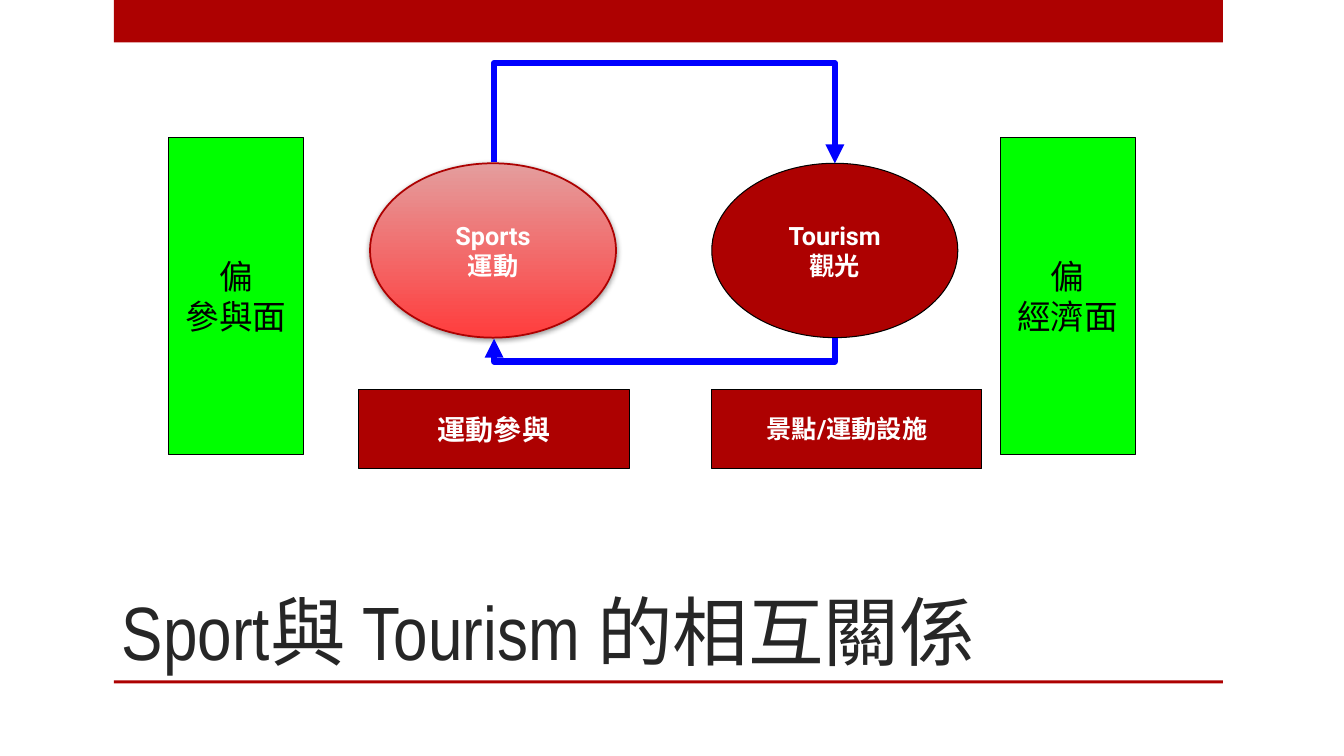
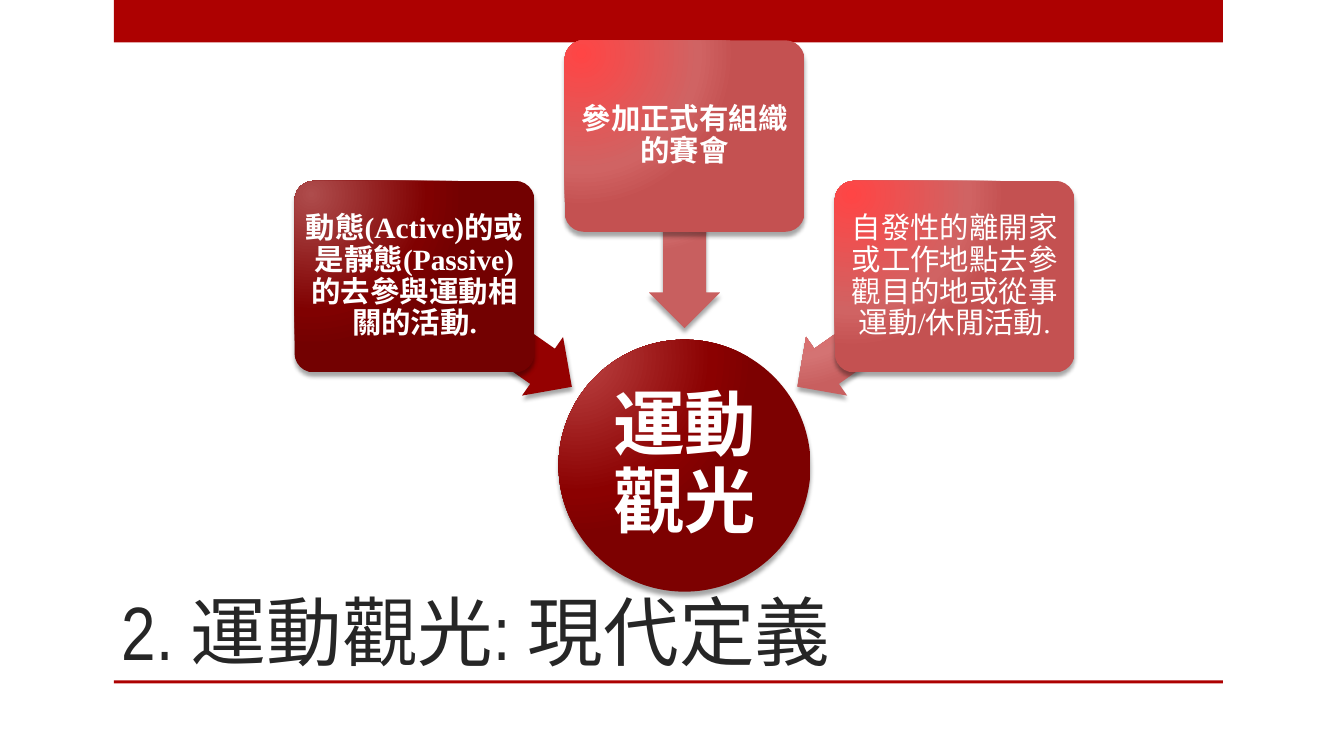
"""Two slides on sport and tourism, built with python-pptx."""
from math import cos, radians, sin

from lxml import etree
from pptx import Presentation
from pptx.dml.color import RGBColor
from pptx.enum import shapes, text
from pptx.oxml import ns
from pptx.util import Inches, Pt

RED, GREEN, BLUE = "AD0101", "00FF00", "0000FF"
BLACK, WHITE, TITLE_GREY = "000000", "FFFFFF", "262626"
TITLE_FONT, LABEL_FONT, CARD_FONT = "Arial Narrow", "Roboto", "Times New Roman"
TITLE_BOX = (1.11, 5, 9.89, 1.75)
BAND_BOX, RULE_BOX = (1.13, 0, 11, 0.42), (1.13, 6.75, 11, 0.03)
STOPS = (0, 76, 100)
PINK_CARD = ("FF4545", "D06363", "C45151")
PINK_ARROW = ("FF5050", "D47373", "C85F5F")
SHAPE = shapes.MSO_SHAPE


def rgb(value):
    """Return the colour for a hex string."""
    return RGBColor.from_string(value)


def child(parent, tag, **attributes):
    """Append a DrawingML element to parent and return it."""
    node = etree.SubElement(parent, ns.qn(f"a:{tag}"))
    for key, value in attributes.items():
        node.set(key, str(value))
    return node


def colour_node(parent, value):
    """Append a colour element to parent and return it."""
    return child(parent, "srgbClr", val=value)


def gradient(shape, colours):
    """Fill a shape with a linear (two colours) or circular (three) gradient."""
    shape.fill.background()
    properties = shape._element.spPr
    placeholder = properties.find(ns.qn("a:noFill"))
    fill = etree.Element(ns.qn("a:gradFill"), rotWithShape="1")
    stops = child(fill, "gsLst")
    circular = len(colours) == 3
    for position, value in zip(STOPS if circular else (0, 100), colours):
        colour_node(child(stops, "gs", pos=position * 1000), value)
    if circular:
        child(child(fill, "path", path="circle"), "fillToRect",
              l=15000, t=15000, r=100000, b=100000)
    else:
        child(fill, "lin", ang=90 * 60000, scaled=0)
    properties.replace(placeholder, fill)


def shade(shape, opacity, blur, distance, angle):
    """Give a shape an outer black shadow."""
    effects = shape._element.spPr.find(ns.qn("a:effectLst"))
    shadow = child(effects, "outerShdw", blurRad=Pt(blur), dist=Pt(distance),
                   dir=angle * 60000, rotWithShape=0)
    child(colour_node(shadow, BLACK), "alpha", val=opacity * 1000)


def block(slide, kind, box, fill, line=None, width=0.75, adjust=(), shadow=None):
    """Draw a preset shape with its fill, outline and shadow."""
    shape = slide.shapes.add_shape(kind, *map(Inches, box))
    shape.shadow.inherit = False
    for index, value in enumerate(adjust):
        shape.adjustments[index] = value
    if isinstance(fill, str):
        shape.fill.solid()
        shape.fill.fore_color.rgb = rgb(fill)
    else:
        gradient(shape, fill)
    if line:
        shape.line.color.rgb = rgb(line)
        shape.line.width = Pt(width)
    else:
        shape.line.fill.background()
    if shadow:
        shade(shape, *shadow)
    return shape


def write(shape, words, size, font, colour=WHITE, bold=False, wrap=True,
          align=text.PP_ALIGN.CENTER, anchor=text.MSO_ANCHOR.MIDDLE,
          spacing=None, margin=None):
    """Put formatted text into a shape, one paragraph a line."""
    frame = shape.text_frame
    frame.text = words
    frame.word_wrap = wrap
    frame.auto_size = text.MSO_AUTO_SIZE.NONE
    frame.vertical_anchor = anchor
    if margin is not None:
        frame.margin_left = frame.margin_right = Inches(margin)
        frame.margin_top = frame.margin_bottom = Inches(margin)
    for paragraph in frame.paragraphs:
        paragraph.alignment = align
        paragraph.line_spacing = spacing
        for run in paragraph.runs:
            run.font.size = Pt(size)
            run.font.name = font
            run.font.bold = bold
            run.font.color.rgb = rgb(colour)


def style_layout(layout, slide):
    """Place the title, red band and rule on the shared layout."""
    title = layout.placeholders[0]
    title.left, title.top, title.width, title.height = map(Inches, TITLE_BOX)
    for position, box in enumerate((BAND_BOX, RULE_BOX)):
        band = block(slide, SHAPE.RECTANGLE, box, RED)._element
        band.nvSpPr.cNvPr.id = max(s.shape_id for s in layout.shapes) + 1
        layout.shapes._spTree.insert(2 + position, band)


def write_title(slide, words):
    """Write the slide title in the shared style."""
    write(slide.shapes.title, words, 54, TITLE_FONT, TITLE_GREY,
          align=text.PP_ALIGN.LEFT, anchor=text.MSO_ANCHOR.BOTTOM)


def bent_arrow(slide, start_x, end_x, start_y, bend_y):
    """Draw a U-shaped arrow that runs across at bend_y."""
    drop, span = 0.01, abs(end_x - start_x)
    arrow = slide.shapes.add_connector(shapes.MSO_CONNECTOR.ELBOW, 0, 0, 0, 0)
    arrow.left = Inches((start_x + end_x - drop) / 2)
    arrow.top = Inches(start_y + (drop - span) / 2)
    arrow.width, arrow.height = Inches(drop), Inches(span)
    arrow.line.color.rgb = rgb(BLUE)
    arrow.line.width = Pt(4.5)
    properties = arrow._element.spPr
    frame = properties.find(ns.qn("a:xfrm"))
    frame.set("rot", str(90 * 60000))
    if end_x > start_x:
        frame.set("flipV", "1")
    guides = properties.find(ns.qn("a:prstGeom")).find(ns.qn("a:avLst"))
    bend = round((bend_y - start_y) / drop * 100000)
    child(guides, "gd", name="adj1", fmla=f"val {bend}")
    child(arrow.line._get_or_add_ln(), "tailEnd", type="triangle")
    child(properties, "effectLst")


def relation_diagram(slide, left, top):
    """Draw the sport and tourism cycle between its two side panels."""
    sports_x, tourism_x, oval_y, label_y = left + 2, left + 5.39, top + 0.26, top + 2.5
    sports = block(slide, SHAPE.OVAL, (sports_x, oval_y, 2.44, 1.73),
                   ("E49D9D", "FF3D3D"), RED, 1.25, shadow=(40, 4, 1, 88))
    tourism = block(slide, SHAPE.OVAL, (tourism_x, oval_y, 2.44, 1.73), RED, BLACK)
    write(sports, "Sports\n運動", 18, LABEL_FONT, bold=True, wrap=False)
    write(tourism, "Tourism\n觀光", 18, LABEL_FONT, bold=True, wrap=False)
    for x, words, size in ((left + 1.89, "運動參與", 20),
                           (tourism_x, "景點/運動設施", 18)):
        label = block(slide, SHAPE.RECTANGLE, (x, label_y, 2.68, 0.79), RED, BLACK)
        write(label, words, size, LABEL_FONT, bold=True, wrap=False)
    sports_mid, tourism_mid = sports_x + 1.23, tourism_x + 1.22
    bent_arrow(slide, sports_mid, tourism_mid, oval_y - 0.01, top - 0.75)
    bent_arrow(slide, tourism_mid, sports_mid, oval_y + 1.73, top + 2.23)
    for x, words in ((left, "偏\n參與面"), (left + 8.25, "偏\n經濟面")):
        panel = block(slide, SHAPE.RECTANGLE, (x, top, 1.34, 3.15), GREEN, BLACK)
        write(panel, words, 24, LABEL_FONT, BLACK, wrap=False)


def definition_diagram(slide, centre_x, centre_y):
    """Draw the core circle with three cards pointing at it."""
    shadow = (35, 3, 3, 90)

    def centred(distance, angle, width, height):
        """Return a box centred on a point around the core."""
        x = centre_x + distance * cos(radians(angle))
        y = centre_y + distance * sin(radians(angle))
        return x - width / 2, y - height / 2, width, height

    core = block(slide, SHAPE.OVAL, centred(0, 0, 2.5, 2.5),
                 ("BC4444", "8B0101", "7D0101"), shadow=shadow)
    write(core, "運動觀光", 51, CARD_FONT, bold=True, spacing=0.9, margin=0.04)
    definitions = (
        (215, "動態(Active)的或是靜態(Passive)的去參與運動相關的活動.", True,
         ("AE4C4C", "800101", "730101"), ("DC3434", "A50101", "950101")),
        (270, "參加正式有組織的賽會", True, PINK_CARD, PINK_ARROW),
        (325, "自發性的離開家或工作地點去參觀目的地或從事運動/休閒活動.", False,
         PINK_CARD, PINK_ARROW),
    )
    for angle, words, bold, card_fill, arrow_fill in definitions:
        arrow = block(slide, SHAPE.LEFT_ARROW, centred(2.32, angle, 1.91, 0.71),
                      arrow_fill, adjust=(0.6, 0.5), shadow=shadow)
        arrow.rotation = angle
        card = block(slide, SHAPE.ROUNDED_RECTANGLE, centred(3.27, angle, 2.38, 1.9),
                     card_fill, adjust=(0.1,), shadow=shadow)
        write(card, words, 21, CARD_FONT, bold=bold, spacing=0.9, margin=0.04)


def main():
    """Build and save the presentation."""
    deck = Presentation()
    deck.slide_width, deck.slide_height = Inches(13.33), Inches(7.5)
    layout = deck.slide_layouts[5]
    relation = deck.slides.add_slide(layout)
    style_layout(layout, relation)
    write_title(relation, "Sport與 Tourism 的相互關係")
    relation_diagram(relation, 1.67, 1.36)
    definition = deck.slides.add_slide(layout)
    write_title(definition, "2. 運動觀光: 現代定義")
    definition_diagram(definition, 6.79, 4.62)
    deck.save("out.pptx")


if __name__ == "__main__":
    main()
